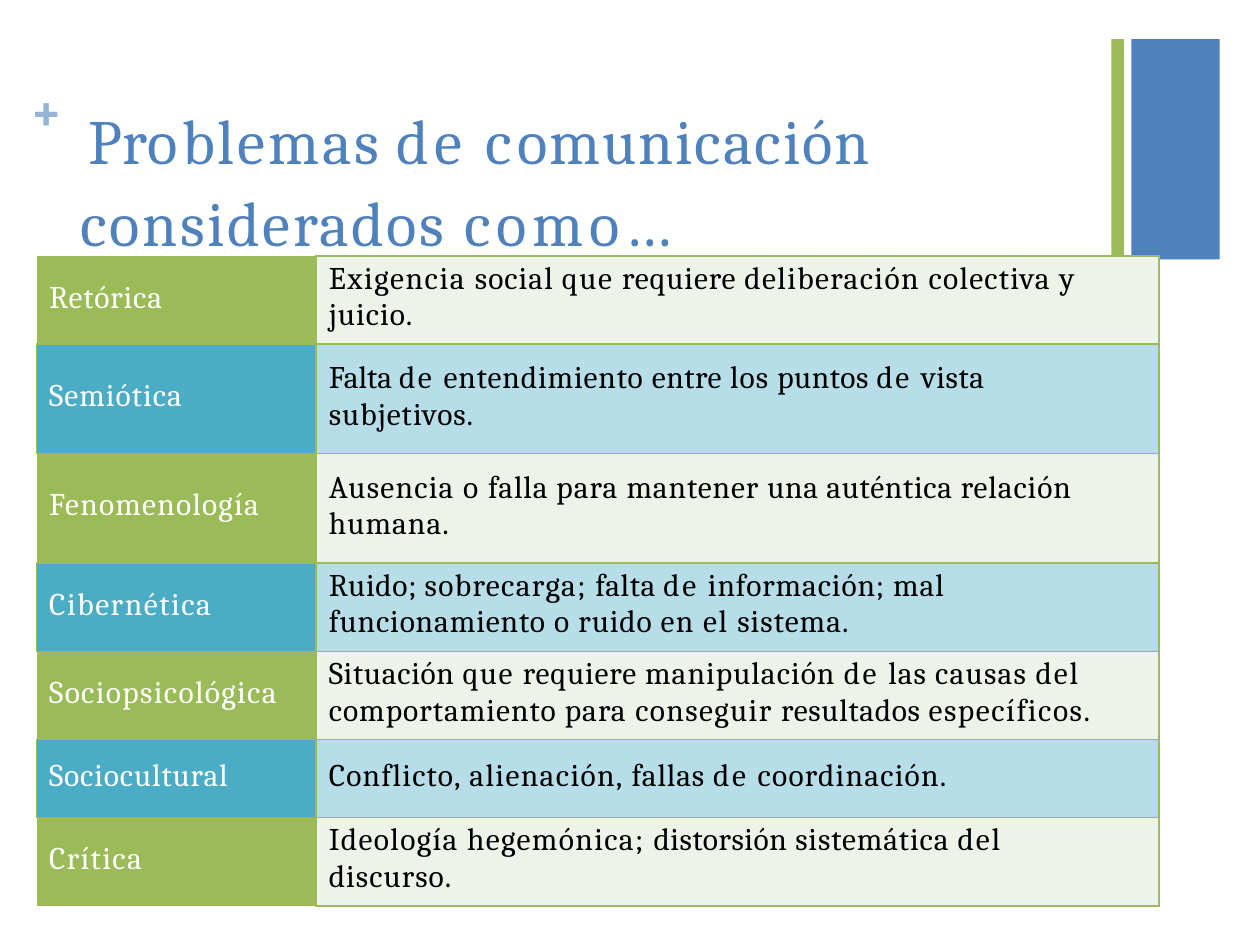
import pptx
import pptx.dml.color
import pptx.enum.shapes
import pptx.oxml
import pptx.oxml.ns
import pptx.util
from pptx.util import Inches

BLUE, GREEN, TEAL = "4F81BC", "9BBA58", "4AACC5"
PALE_GREEN, PALE_BLUE = "EEF3EA", "B7DEE8"
FONT = "Cambria"
PLAIN_TABLE = "{2D5ABB26-0587-4C30-8999-92F81FD0307C}"

# Runs are (text, letter spacing in points)
TITLE = [("P", 0.1), ("r", -1.2), ("o", 2.5), ("b", 1.8), ("lema", 1.6), ("s ", 1),
         ("de ", 2.8), ("c", 2.7), ("omunicación ", 1.1), ("considerados ", 1.5),
         ("como…", 3.2)]

# Row height, label run, label top margin, text top margin, text paragraphs
ROWS = [
    (0.7, ("Retórica", 0.5), 0.19, 0.04, [
        [("Exigencia ", 0.9), ("social ", 0.6), ("que ", 0.9), ("requiere ", 0.5),
         ("deliberación ", 0.8), ("colectiva ", 0.7), ("y", 1.1)],
        [("juicio.", 0.6)]]),
    (0.87, ("Semiótica", 0.6), 0.27, 0.13, [
        [("Falta ", 0), ("de ", 1.4), ("entendimiento ", 0.5), ("entre", 0.3),
         (" los ", 0.6), ("puntos ", 0.3), ("de ", 1.4), ("vista", 0.3)],
        [("subjetivos.", 0.6)]]),
    (0.87, ("Fenomenología", 0.7), 0.27, 0.13, [
        [("Ausencia ", 0.7), ("o ", 0.8), ("falla ", 0.5), ("para ", 0.6),
         ("mantener ", 0.5), ("una auténtica ", 0.4), ("relación", 0.5)],
        [("humana.", 0.6)]]),
    (0.7, ("Cibernética", 0.9), 0.19, 0.04, [
        [("Ruido; ", 0.4), ("sobrecarga; ", 0.8), ("falta ", 0.3), ("de ", 1.4),
         ("información; ", 0.5), ("mal", 0.6)],
        [("funcionamiento ", 0.5), ("o", 0.8), (" ruido ", 0.5), ("en ", 0.8),
         ("el ", 0.9), ("sistema.", 0.6)]]),
    (0.7, ("Sociopsicológica", 0.8), 0.19, 0.04, [
        [("Situación ", 0.4), ("que ", 0.9), ("requiere ", 0.5), ("manipulación ", 0.6),
         ("de ", 1.4), ("las ", 0.6), ("causas ", 0.7), ("del ", 1.1),
         ("comportamiento para ", 0.6), ("conseguir ", 0.8), ("resultados ", 0.4),
         ("específicos.", 0.9)]]),
    (0.62, ("Sociocultural", 0.5), 0.15, 0.15, [
        [("Conflicto, ", 0.7), ("alienación, ", 0.8), ("fallas ", 0.5), ("de ", 1.4),
         ("coordinación.", 0.7)]]),
    (0.7, ("Crítica", 0.8), 0.19, 0.04, [
        [("Ideología hegemónica; ", 0.8), ("distorsión ", 0.3), ("sistemática ", 0.5),
         ("del", 1.1)],
        [("discurso.", 0.6)]]),
]


def rgb(color):
    return pptx.dml.color.RGBColor.from_string(color)


def set_attrs(obj, values):
    for name, value in values.items():
        setattr(obj, name, value)


def add_run(p, text, spacing, size, color, bold=False):
    r = p.add_run()
    r.text = text
    set_attrs(r.font, {"name": FONT, "size": pptx.util.Pt(size), "bold": bold})
    r.font.color.rgb = rgb(color)
    rPr = r._r.get_or_add_rPr()
    rPr.set("spc", str(round(spacing * 100)))
    return rPr


def add_bar(s, left, top, width, height, color):
    sp = s.shapes.add_shape(pptx.enum.shapes.MSO_SHAPE.RECTANGLE, Inches(left),
                            Inches(top), Inches(width), Inches(height))
    sp.shadow.inherit = False
    sp.fill.solid()
    sp.fill.fore_color.rgb = rgb(color)
    sp.line.fill.background()


def add_title(s):
    tf = s.shapes.add_textbox(Inches(0.2), Inches(0.55), Inches(6.97), Inches(1.23)).text_frame
    set_attrs(tf, {"word_wrap": True, "margin_left": 0, "margin_right": 0,
                   "margin_top": Inches(0.01), "margin_bottom": 0})
    p = tf.paragraphs[0]
    p.space_before = pptx.util.Pt(1)
    # Hanging indent for the raised plus sign
    pPr = p._p.get_or_add_pPr()
    pPr.set("marL", str(Inches(0.44)))
    pPr.set("indent", str(Inches(-0.4)))
    add_run(p, "+ ", 4, 54, "94B3D6", bold=True).set("baseline", "36000")
    for text, spacing in TITLE:
        add_run(p, text, spacing, 36, BLUE)


def add_borders(cell, color):
    tcPr = cell._tc.get_or_add_tcPr()
    for side in ("lnL", "lnR", "lnT", "lnB"):
        tcPr.append(pptx.oxml.parse_xml(
            f'<a:{side} {pptx.oxml.ns.nsdecls("a")} w="12700"><a:solidFill>'
            f'<a:srgbClr val="{color}"/></a:solidFill></a:{side}>'))


def fill_cell(cell, paragraphs, top, color, fill, border=True):
    set_attrs(cell, {"margin_left": Inches(0.1), "margin_right": 0,
                     "margin_top": Inches(top), "margin_bottom": 0})
    if border:
        add_borders(cell, GREEN)
    cell.fill.solid()
    cell.fill.fore_color.rgb = rgb(fill)
    tf = cell.text_frame
    for i, runs in enumerate(paragraphs):
        p = tf.add_paragraph() if i else tf.paragraphs[0]
        for text, spacing in runs:
            add_run(p, text, spacing, 18, color)


def add_problem_table(s):
    frame = s.shapes.add_table(len(ROWS), 3, Inches(0.29), Inches(2.03),
                               Inches(9.4), Inches(5.16))
    table = frame.table
    set_attrs(table, {"first_row": False, "horz_banding": False})
    table._tbl.tblPr.find(pptx.oxml.ns.qn("a:tableStyleId")).text = PLAIN_TABLE
    for column, width in zip(table.columns, (2.22, 6.69, 0.49)):
        column.width = Inches(width)
    for i, (height, label, label_top, text_top, text) in enumerate(ROWS):
        table.rows[i].height = Inches(height)
        odd = i % 2 == 1
        fill_cell(table.cell(i, 0), [[label]], label_top, "FFFFFF",
                  TEAL if odd else GREEN, border=odd)
        fill_cell(table.cell(i, 1), text, text_top, "000000",
                  PALE_BLUE if odd else PALE_GREEN)
    # Empty strip down the right side
    strip = table.cell(0, 2)
    strip.merge(table.cell(len(ROWS) - 1, 2))
    strip.fill.background()


def main():
    prs = pptx.Presentation()
    set_attrs(prs, {"slide_width": Inches(10), "slide_height": Inches(7.5)})
    s = prs.slides.add_slide(prs.slide_layouts[6])
    # Corner bars, title, table
    add_bar(s, 8.98, 0.31, 0.7, 1.75, BLUE)
    add_title(s)
    add_bar(s, 8.82, 0.31, 0.1, 1.72, GREEN)
    add_problem_table(s)
    prs.save("out.pptx")


if __name__ == "__main__":
    main()
